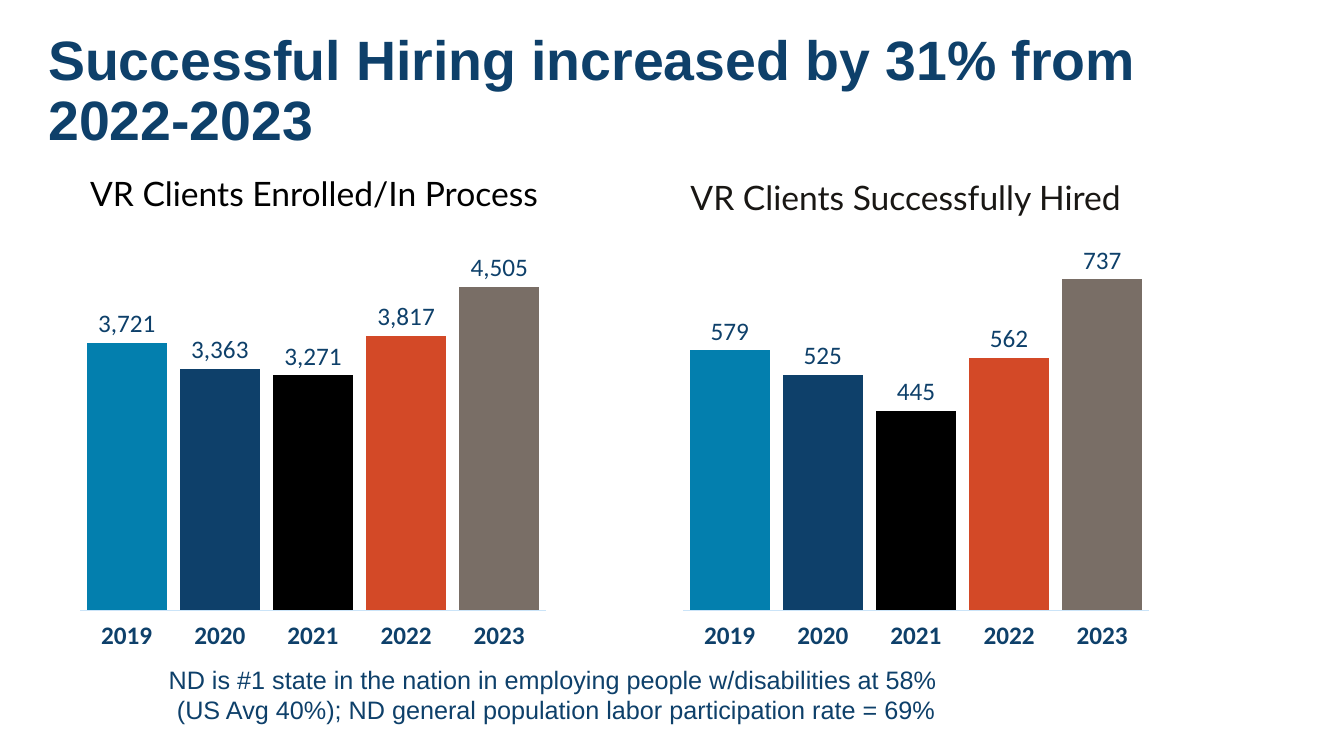
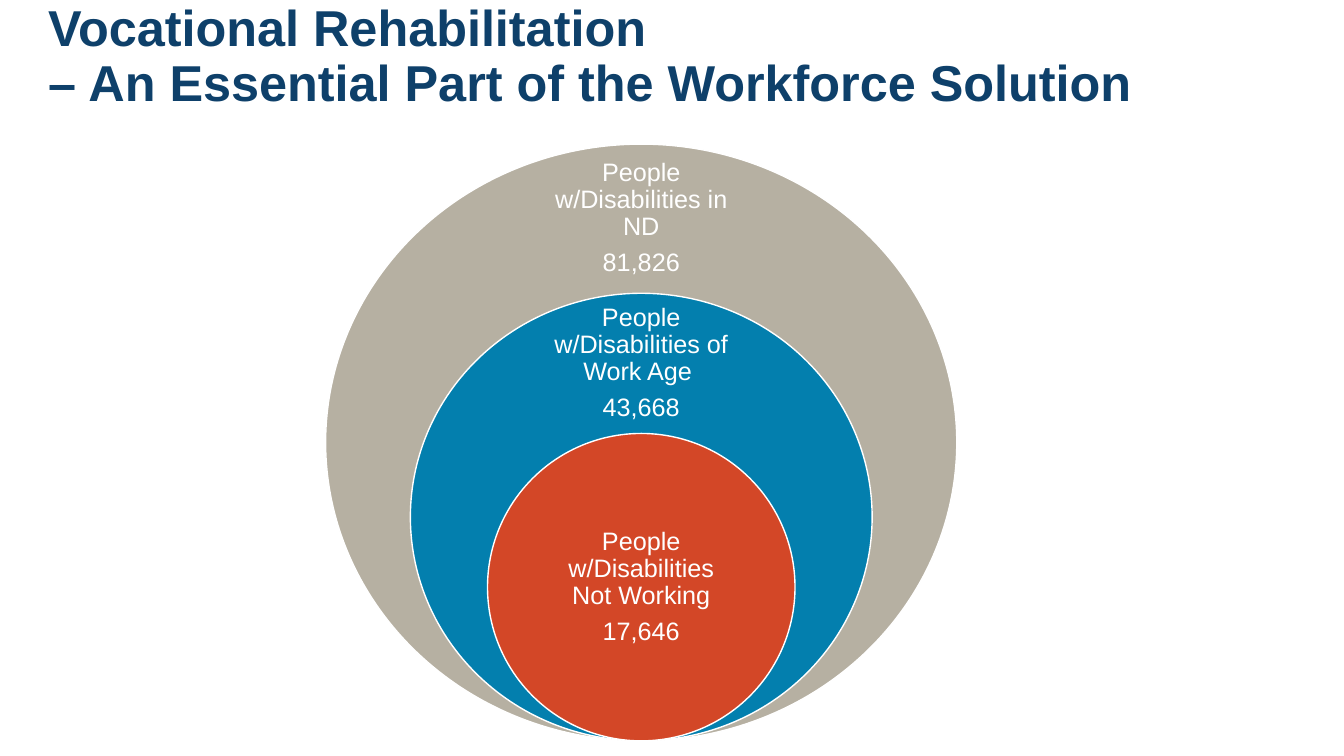
from pptx import Presentation
from pptx.chart.data import CategoryChartData
from pptx.dml.color import RGBColor
from pptx.enum.chart import XL_CHART_TYPE, XL_LABEL_POSITION, XL_TICK_LABEL_POSITION, XL_TICK_MARK
from pptx.enum.shapes import MSO_SHAPE
from pptx.enum.text import MSO_ANCHOR, PP_ALIGN
from pptx.util import Inches, Pt

NAVY, BLUE, BLACK, WHITE = "0E406A", "037FAE", "000000", "FFFFFF"
ORANGE, TAUPE, SAND, RUST = "D34927", "796E66", "B6B0A2", "D34727"
INK, AXIS = "191714", "CBE4F8"
YEARS = ["2019", "2020", "2021", "2022", "2023"]
YEAR_COLORS = [BLUE, NAVY, BLACK, ORANGE, TAUPE]


def color(hex_value):
    return RGBColor.from_string(hex_value)


def style_font(font, size, hex_value, name="Arial", bold=False):
    font.size = Pt(size)
    font.name = name
    font.bold = bold
    font.color.rgb = color(hex_value)


def add_text(slide, box, lines, size, hex_value, name="Arial", bold=False, align=PP_ALIGN.LEFT,
             anchor=MSO_ANCHOR.TOP, inset=None, line_spacing=None, space_after=0):
    shape = slide.shapes.add_textbox(*map(Inches, box))
    frame = shape.text_frame
    frame.word_wrap = True
    frame.vertical_anchor = anchor
    if inset is not None:
        frame.margin_left = frame.margin_right = Inches(inset)
        frame.margin_top = frame.margin_bottom = Inches(inset)
    frame.text = "\n".join(lines)
    for paragraph in frame.paragraphs:
        paragraph.alignment = align
        paragraph.line_spacing = line_spacing
        paragraph.space_after = Pt(space_after)
        for run in paragraph.runs:
            style_font(run.font, size, hex_value, name, bold)


def add_title(slide, text, size, top):
    add_text(slide, (0.38, top, 12.45, 1.03), [text], size, NAVY, bold=True,
             anchor=MSO_ANCHOR.MIDDLE, line_spacing=0.9)


def add_year_chart(slide, box, values, maximum):
    data = CategoryChartData(number_format="#,##0")
    data.categories = YEARS
    data.add_series("Series 1", values)
    chart = slide.shapes.add_chart(XL_CHART_TYPE.COLUMN_CLUSTERED, *map(Inches, box), data).chart
    style_font(chart.font, 18, NAVY, "Calibri")
    chart.has_legend = False
    chart.has_title = False

    value_axis = chart.value_axis
    value_axis.minimum_scale = 0
    value_axis.maximum_scale = maximum
    value_axis.has_major_gridlines = False
    value_axis.visible = False

    year_axis = chart.category_axis
    year_axis.major_tick_mark = XL_TICK_MARK.NONE
    year_axis.tick_label_position = XL_TICK_LABEL_POSITION.LOW
    year_axis.format.line.color.rgb = color(AXIS)
    year_axis.format.line.width = Pt(0.75)
    style_font(year_axis.tick_labels.font, 18, NAVY, "Calibri", bold=True)

    plot = chart.plots[0]
    plot.gap_width = 17
    plot.vary_by_categories = False
    series = plot.series[0]
    for index, hex_value in enumerate(YEAR_COLORS):
        fill = series.points[index].format.fill
        fill.solid()
        fill.fore_color.rgb = color(hex_value)

    labels = series.data_labels
    labels.show_value = True
    labels.position = XL_LABEL_POSITION.OUTSIDE_END
    labels.number_format = "#,##0"
    labels.number_format_is_linked = False
    style_font(labels.font, 18, NAVY, "Calibri")


def add_nested_circle(slide, center, bottom, size, hex_value, label_box, lines):
    width, height = size
    circle = slide.shapes.add_shape(MSO_SHAPE.OVAL, Inches(center - width / 2), Inches(bottom - height),
                                    Inches(width), Inches(height))
    circle.shadow.inherit = False
    circle.fill.solid()
    circle.fill.fore_color.rgb = color(hex_value)
    circle.line.color.rgb = color(WHITE)
    circle.line.width = Pt(1)
    label_offset, label_width, label_height = label_box
    add_text(slide, (center - label_width / 2, bottom - height + label_offset, label_width, label_height),
             lines, 18, WHITE, align=PP_ALIGN.CENTER, anchor=MSO_ANCHOR.MIDDLE, inset=0.14,
             line_spacing=0.9, space_after=6.3)


def build_hiring_slide(slide):
    add_title(slide, "Successful Hiring increased by 31% from 2022-2023", 39.6, 0.4)
    add_text(slide, (0.76, 1.71, 4.71, 0.69), ["VR Clients Enrolled/In Process"], 24, BLACK, "Lato",
             align=PP_ALIGN.CENTER, line_spacing=0.9)
    add_text(slide, (6.75, 1.71, 4.68, 0.5), ["VR Clients Successfully Hired"], 24, INK, "Lato")
    add_year_chart(slide, (0.7, 2.41, 4.81, 4.13), [3721, 3363, 3271, 3817, 4505], 5000)
    add_year_chart(slide, (6.68, 2.41, 4.81, 4.13), [579, 525, 445, 562, 737], 800)
    add_text(slide, (1.01, 6.54, 9.01, 0.71),
             ["ND is #1 state in the nation in employing people w/disabilities at 58% ",
              "(US Avg 40%); ND general population labor participation rate = 69%"],
             18, NAVY, align=PP_ALIGN.CENTER)


def build_workforce_slide(slide):
    add_title(slide, "Vocational Rehabilitation \v– An Essential Part of the Workforce Solution", 36, 0.06)
    circles = [
        ((6.26, 5.92), SAND, (0.29, 2.19, 0.89), ["People w/Disabilities in ND", "81,826"]),
        ((4.58, 4.44), BLUE, (0.28, 2.13, 0.83), ["People w/Disabilities of Work Age ", "43,668"]),
        ((3.05, 3.05), RUST, (0.76, 2.16, 1.53), ["People w/Disabilities Not Working", "17,646"]),
    ]
    for size, hex_value, label_box, lines in circles:
        add_nested_circle(slide, 6.36, 7.35, size, hex_value, label_box, lines)


def main():
    presentation = Presentation()
    presentation.slide_width = Inches(13.33)
    presentation.slide_height = Inches(7.5)
    for build in (build_hiring_slide, build_workforce_slide):
        build(presentation.slides.add_slide(presentation.slide_layouts[6]))
    presentation.save("out.pptx")


if __name__ == "__main__":
    main()
